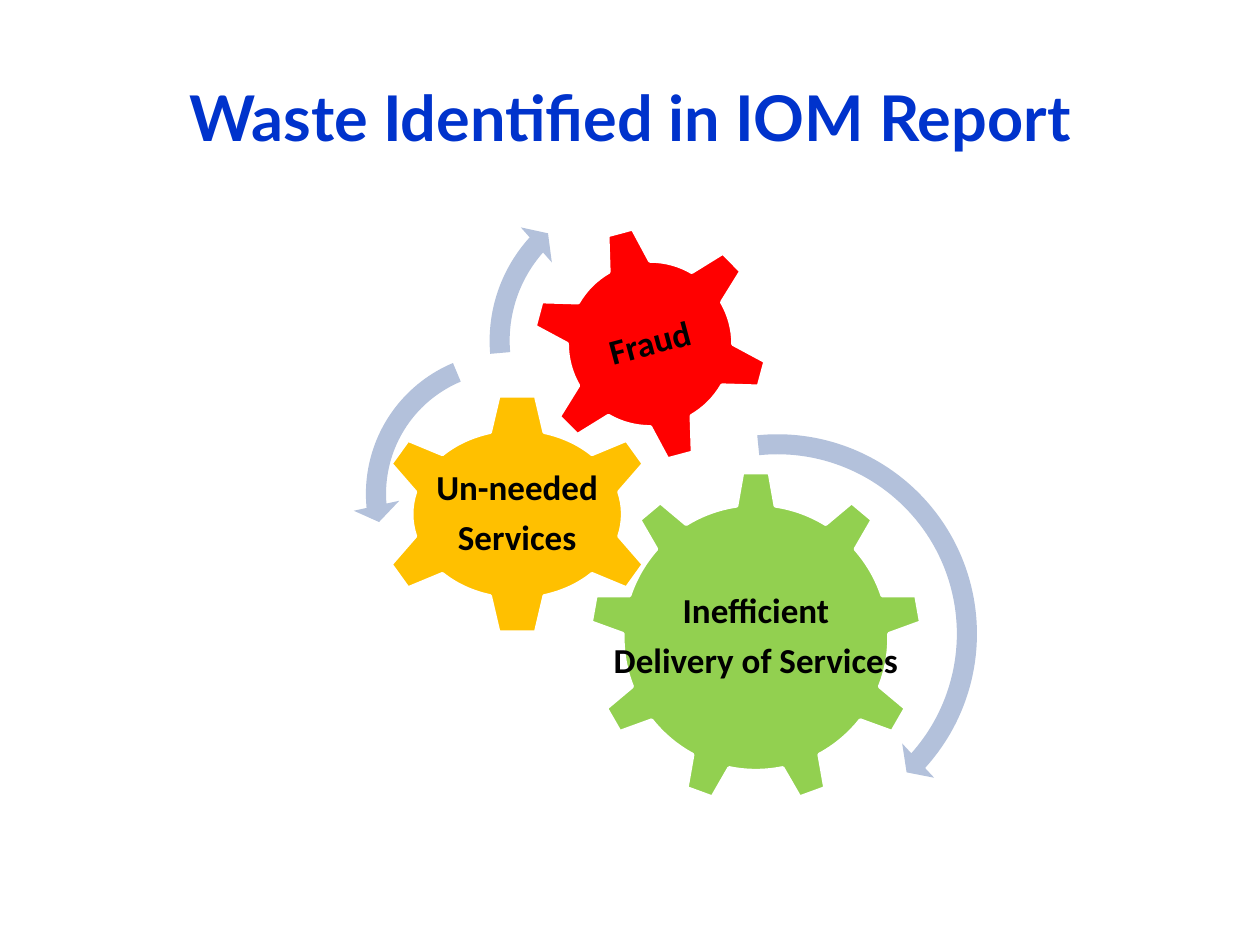
from pptx import Presentation, util as u
from pptx.dml.color import RGBColor
from pptx.enum import shapes, text

KIND = shapes.MSO_SHAPE
TITLE = "Waste Identified in IOM Report"
GEARS = [
    dict(kind=KIND.GEAR_9, place=(4.68, 3.74, 2.64, 2.64), inset=0, turn=0,
         color="92D050", lines=["Inefficient", "Delivery of Services"]),
    dict(kind=KIND.GEAR_6, place=(2.98, 3.12, 2.25, 1.92), inset=0, turn=0,
         color="FFC000", lines=["Un-needed", "Services"]),
    dict(kind=KIND.GEAR_6, place=(4.22, 1.79, 1.88, 1.88), inset=0.41, turn=345,
         color="FF0000", lines=["Fraud"]),
]
ARROW_COLOR = "B3C1DB"
ARROWS = [
    (KIND.CIRCULAR_ARROW, (4.48, 3.34, 3.38), (0.047, 2.99, 25.21, 158.52, 0.055)),
    (KIND.LEFT_CIRCULAR_ARROW, (2.8, 2.69, 2.46), (0.065, 4.3, 104.89, 148.38, 0.075)),
    (KIND.CIRCULAR_ARROW, (3.78, 1.38, 2.65), (0.06, 3.94, 133.14, 105.08, 0.07)),
]


def rgb(value):
    return RGBColor.from_string(value)


def add_filled(page, kind, place, color):
    shape = page.shapes.add_shape(kind, *map(u.Inches, place))
    shape.shadow.inherit = False
    shape.fill.solid()
    shape.fill.fore_color.rgb = rgb(color)
    shape.line.fill.background()
    return shape


def add_text(page, place, lines, font, size, color, margin=None):
    box = page.shapes.add_textbox(*map(u.Inches, place))
    frame = box.text_frame
    frame.word_wrap = True
    frame.vertical_anchor = text.MSO_ANCHOR.MIDDLE
    if margin is not None:
        frame.margin_left = frame.margin_right = u.Inches(margin)
        frame.margin_top = frame.margin_bottom = u.Inches(margin)
    for index, line in enumerate(lines):
        para = frame.add_paragraph() if index else frame.paragraphs[0]
        para.alignment = text.PP_ALIGN.CENTER
        span = para.add_run()
        span.text = line
        span.font.name = font
        span.font.size = u.Pt(size)
        span.font.bold = True
        span.font.color.rgb = rgb(color)
    return box


def add_gear(page, gear):
    shape = add_filled(page, gear["kind"], gear["place"], gear["color"])
    shape.line.color.rgb = rgb("FFFFFF")
    shape.line.width = u.Pt(2)
    shape.rotation = gear["turn"]
    left, top, width, height = gear["place"]
    inset = gear["inset"]
    inner = (left + inset, top + inset, width - 2 * inset, height - 2 * inset)
    label = add_text(page, inner, gear["lines"], "Calibri", 20, "000000", 0.03)
    label.rotation = gear["turn"]
    for para in label.text_frame.paragraphs:
        para.line_spacing = 0.9
        para.space_after = u.Pt(7)


def main():
    deck = Presentation()
    deck.slide_width, deck.slide_height = u.Inches(10), u.Inches(7.5)
    page = deck.slides.add_slide(deck.slide_layouts[6])
    add_text(page, (0.5, 0.3, 9, 1.25), [TITLE], "Lato", 36, "0033CC")
    for gear in GEARS:
        add_gear(page, gear)
    for kind, (left, top, side), bends in ARROWS:
        arrow = add_filled(page, kind, (left, top, side, side), ARROW_COLOR)
        for index, bend in enumerate(bends):
            arrow.adjustments[index] = bend
    deck.save("out.pptx")


if __name__ == "__main__":
    main()
